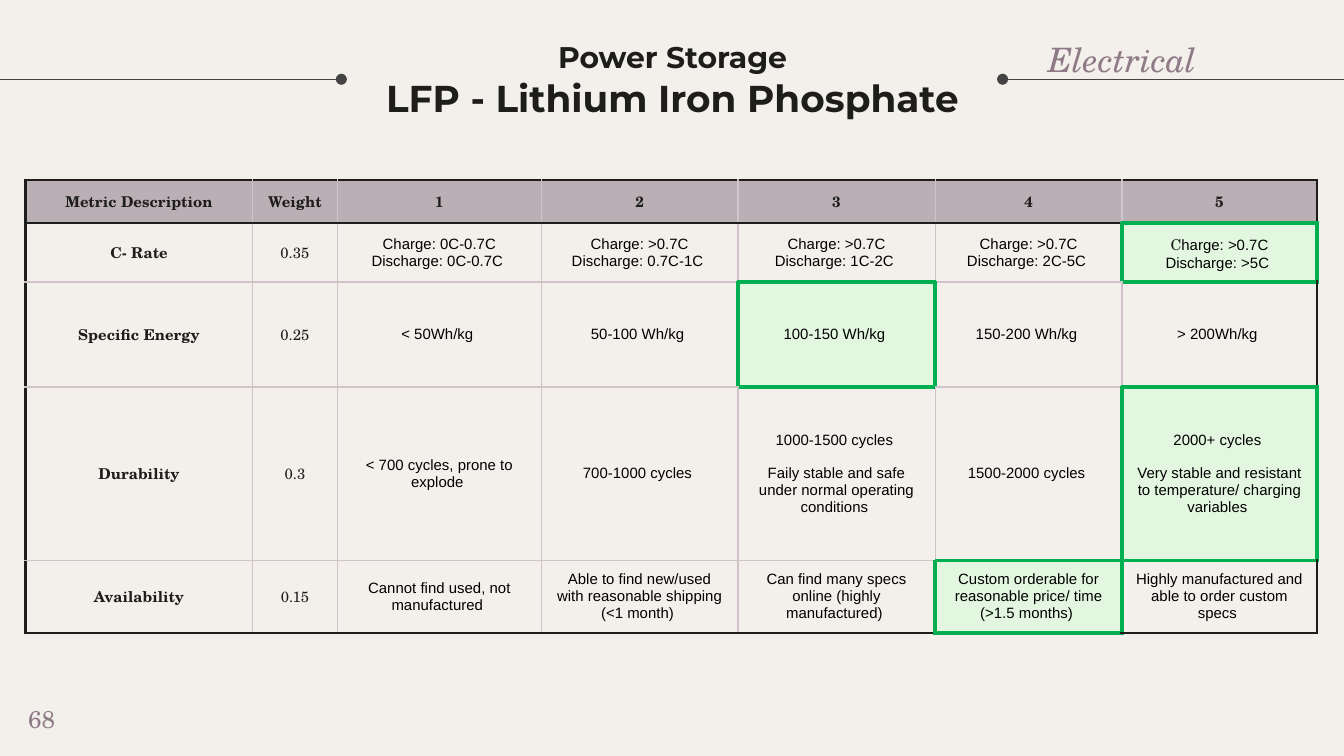
from pptx import Presentation
from pptx.dml.color import RGBColor
from pptx.enum.shapes import MSO_CONNECTOR as Connector
from pptx.enum.text import MSO_ANCHOR as Anchor, PP_ALIGN as Align
from pptx.oxml import parse_xml
from pptx.oxml.ns import nsdecls, qn
from pptx.util import Inches, Pt
from lxml.etree import SubElement

COLORS = {
    "background": "F3EFEA", "dark": "1D1D1B", "black": "000000", "rule": "434343",
    "mauve": "8F7B87", "header": "BBAFB6", "grid": "D0C3CA",
    "green": "00B050", "highlight": "D5FFD7",
}
SERIF, SANS, TITLE = "TeX Gyre Schola", "Arial", "Montserrat"

COLUMN_WIDTHS = [1.69, 0.63, 1.52, 1.46, 1.47, 1.39, 1.45]
ROW_HEIGHTS = [0.32, 0.44, 0.78, 1.29, 0.52]
ROWS = [
    ["Metric Description", "Weight", "1", "2", "3", "4", "5"],
    ["C- Rate", "0.35", "Charge: 0C-0.7C Discharge: 0C-0.7C ",
     "Charge: >0.7C Discharge: 0.7C-1C ", "Charge: >0.7C Discharge: 1C-2C ",
     "Charge: >0.7C Discharge: 2C-5C ", "Charge: >0.7C Discharge: >5C "],
    ["Specific Energy", "0.25", "< 50Wh/kg ", "50-100 Wh/kg ", "100-150 Wh/kg ",
     "150-200 Wh/kg ", "> 200Wh/kg "],
    ["Durability", "0.3", "< 700 cycles, prone to explode ", "700-1000 cycles ",
     "1000-1500 cycles \nFaily stable and safe under normal operating conditions ",
     "1500-2000 cycles ",
     "2000+ cycles \nVery stable and resistant to temperature/ charging variables "],
    ["Availability", "0.15", "Cannot find used, not manufactured ",
     "Able to find new/used with reasonable shipping (<1 month) ",
     "Can find many specs online (highly manufactured) ",
     "Custom orderable for reasonable price/ time (>1.5 months) ",
     "Highly manufactured and able to order custom specs "],
]
SCORES = {(1, 6), (2, 4), (3, 6), (4, 5)}
SIDES = {"lnL": (0, -1), "lnR": (0, 1), "lnT": (-1, 0), "lnB": (1, 0)}


def border_style(row, column, side):
    row_step, column_step = SIDES[side]
    neighbor = (row + row_step, column + column_step)
    if (row, column) in SCORES or neighbor in SCORES:
        return "green", 2.25
    if neighbor[0] == len(ROWS):
        return "dark", 1
    if neighbor[1] in (-1, len(COLUMN_WIDTHS)) or {row, neighbor[0]} in ({0, -1}, {0, 1}):
        return "dark", 1.5
    return "grid", 1


class SlideBuilder:
    def __init__(self, presentation):
        self.slide = presentation.slides.add_slide(presentation.slide_layouts[6])
        fill = self.slide.background.fill
        fill.solid()
        fill.fore_color.rgb = self.color("background")

    def color(self, name):
        return RGBColor.from_string(COLORS[name])

    def style(self, run, font, size, color, bold=False, italic=False):
        run.font.name, run.font.size = font, Pt(size)
        run.font.bold, run.font.italic = bold, italic
        run.font.color.rgb = self.color(color)

    def text(self, box, text, sizes, font, color, anchor=Anchor.MIDDLE, **emphasis):
        shape = self.slide.shapes.add_textbox(*map(Inches, box))
        text_frame = shape.text_frame
        text_frame.word_wrap = True
        text_frame.vertical_anchor = anchor
        text_frame.margin_left = text_frame.margin_right = Inches(0.1)
        text_frame.margin_top = text_frame.margin_bottom = Inches(0.1)
        paragraph = text_frame.paragraphs[0]
        paragraph.text = text
        paragraph.alignment = Align.CENTER
        for run, size in zip(paragraph.runs, sizes):
            self.style(run, font, size, color, **emphasis)
        return paragraph

    def dotted_line(self, start, end, y):
        line = self.slide.shapes.add_connector(
            Connector.STRAIGHT, Inches(start), Inches(y), Inches(end), Inches(y))
        line.line.color.rgb = self.color("rule")
        line.line.width = Pt(0.75)
        SubElement(line.line._get_or_add_ln(), qn("a:headEnd"), type="oval")
        SubElement(line._element.spPr, qn("a:effectLst"))

    def cell(self, cell, row, column):
        cell.vertical_anchor = Anchor.MIDDLE
        cell.margin_left = cell.margin_right = Inches(0.1)
        cell.margin_top = cell.margin_bottom = Inches(0.07)
        properties = cell._tc.get_or_add_tcPr()
        for side in SIDES:
            color, width = border_style(row, column, side)
            properties.append(parse_xml(
                f'<a:{side} {nsdecls("a")} w="{Pt(width)}"><a:solidFill>'
                f'<a:srgbClr val="{COLORS[color]}"/></a:solidFill></a:{side}>'))
        if row == 0 or (row, column) in SCORES:
            cell.fill.solid()
            cell.fill.fore_color.rgb = self.color("highlight" if row else "header")
        else:
            cell.fill.background()
        if (row, column) in SCORES:
            SubElement(next(properties.find(qn("a:solidFill")).iterchildren()),
                       qn("a:alpha"), val="50000")
        label = row == 0 or column < 2
        cell.text_frame.text = ROWS[row][column]
        for index, paragraph in enumerate(cell.text_frame.paragraphs):
            paragraph.alignment = Align.CENTER
            if index:
                paragraph.space_before = Pt(9)
            self.style(paragraph.runs[0], SERIF if label else SANS, 8,
                       "dark" if label else "black", bold=row == 0 or column == 0)

    def table(self, left, top):
        table = self.slide.shapes.add_table(
            len(ROWS), len(COLUMN_WIDTHS), Inches(left), Inches(top),
            Inches(sum(COLUMN_WIDTHS)), Inches(sum(ROW_HEIGHTS))).table
        table.first_row = table.horz_banding = False
        for column, width in zip(table.columns, COLUMN_WIDTHS):
            column.width = Inches(width)
        for row, height in zip(table.rows, ROW_HEIGHTS):
            row.height = Inches(height)
        for row in range(len(ROWS)):
            for column in range(len(COLUMN_WIDTHS)):
                self.cell(table.cell(row, column), row, column)
        return table

    def serif_initial(self, paragraph):
        initial = paragraph.runs[0]
        rest = paragraph.add_run()
        rest.text, initial.text = initial.text[1:], initial.text[:1]
        self.style(initial, SERIF, 8, "dark")
        self.style(rest, SANS, 8, "black")


def main():
    presentation = Presentation()
    presentation.slide_width = Inches(10)
    presentation.slide_height = Inches(10) * 9 // 16
    builder = SlideBuilder(presentation)
    builder.dotted_line(2.54, 0, 0.59)
    builder.dotted_line(7.46, 10, 0.59)
    builder.text((2.54, 0.12, 4.93, 0.94), "Power Storage\vLFP - Lithium Iron Phosphate",
                 (16, 20), TITLE, "dark", bold=True)
    builder.text((0.01, 5.14, 0.6, 0.43), "68", (13,), SERIF, "mauve", Anchor.TOP)
    table = builder.table(0.19, 1.34)
    builder.serif_initial(table.cell(1, 6).text_frame.paragraphs[0])
    heading = builder.text((7.57, 0.25, 1.57, 0.34), "Electrical", (18,), SERIF, "mauve",
                           italic=True)
    heading.line_spacing = 1.15
    presentation.save("out.pptx")


if __name__ == "__main__":
    main()
